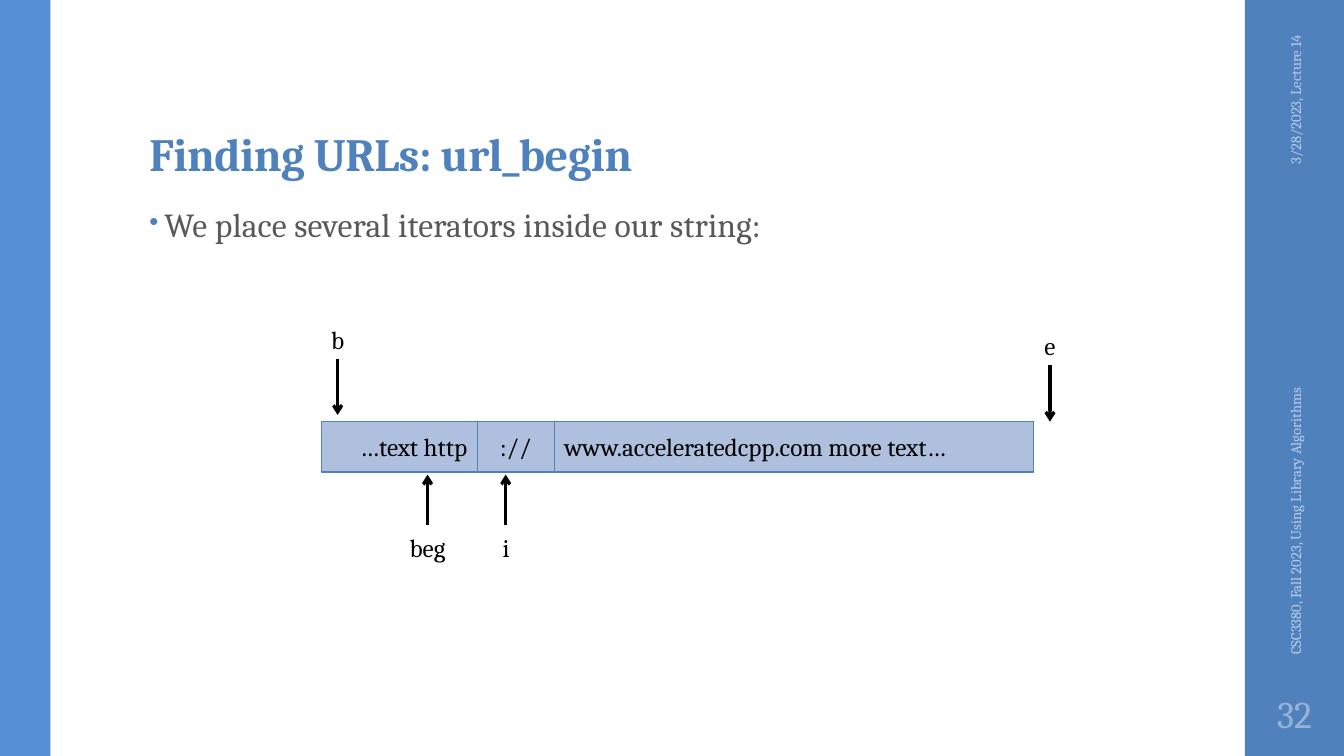
from lxml.etree import SubElement
from pptx import Presentation
from pptx.dml.color import RGBColor
from pptx.enum.shapes import MSO_CONNECTOR, MSO_SHAPE
from pptx.enum.text import MSO_ANCHOR, PP_ALIGN
from pptx.oxml.ns import qn
from pptx.util import Inches, Pt

WIDE, HIGH = Inches(13.33), Inches(7.5)
COLS, ROWS = 160, 90
FONT = "Cambria"
HUES = {
    "title": "4F81BD", "edge": "558ED5", "body": "595959", "foot": "B9CDE5",
    "page": "95B3D7", "cell": "AFC0DF", "ink": "000000",
}
LEFT, MID, RIGHT = PP_ALIGN.LEFT, PP_ALIGN.CENTER, PP_ALIGN.RIGHT


def col(n):
    return round(WIDE * n / COLS)


def row(n):
    return round(HIGH * n / ROWS)


def place(x, y, w, h):
    return col(x), row(y), col(w), row(h)


def hue(name):
    return RGBColor.from_string(HUES[name])


def bullet(para, name, size, indent):
    props = para._p.get_or_add_pPr()
    props.set("marL", str(indent))
    props.set("indent", str(-indent))
    tint = SubElement(props, qn("a:buClr"))
    SubElement(tint, qn("a:srgbClr"), val=HUES[name])
    SubElement(props, qn("a:buSzPct"), val=str(size * 1000))
    SubElement(props, qn("a:buChar"), char="•")


def write(shape, text, size=18, color="ink", bold=False, align=LEFT,
          anchor=MSO_ANCHOR.MIDDLE, wrap=True, lead=None, track=0,
          inset=(0.1, 0.05, 0.1, 0.05), dot=False):
    frame = shape.text_frame
    frame.word_wrap = wrap
    frame.vertical_anchor = anchor
    (frame.margin_left, frame.margin_top,
     frame.margin_right, frame.margin_bottom) = map(Inches, inset)
    para = frame.paragraphs[0]
    para.alignment = align
    if lead:
        para.line_spacing = lead
    if dot:
        bullet(para, "title", 80, Inches(0.15))
    run = para.add_run()
    run.text = text
    font = run.font
    font.name, font.size, font.bold = FONT, Pt(size), bold
    font.color.rgb = hue(color)
    if track:
        run._r.get_or_add_rPr().set("spc", str(round(track * 100)))


def label(slide, spot, text, turn=0, **style):
    box = slide.shapes.add_textbox(*place(*spot))
    box.rotation = turn
    write(box, text, **style)


def block(slide, spot, fill, line=None):
    shape = slide.shapes.add_shape(MSO_SHAPE.RECTANGLE, *place(*spot))
    shape.shadow.inherit = False
    shape.fill.solid()
    shape.fill.fore_color.rgb = hue(fill)
    if line:
        shape.line.color.rgb = hue(line)
        shape.line.width = Pt(0.75)
    else:
        shape.line.fill.background()
    return shape


def arrow(slide, x, start, end):
    link = slide.shapes.add_connector(
        MSO_CONNECTOR.STRAIGHT, col(x), row(start), col(x), row(end))
    link.line.color.rgb = hue("ink")
    link.line.width = Pt(2.25)
    SubElement(link.line._get_or_add_ln(), qn("a:tailEnd"), type="arrow")
    SubElement(link._element.spPr, qn("a:effectLst"))


def marker(slide, name, x, start, end, width):
    """Arrow pointing at the string, with its name at the far end."""
    arrow(slide, x, start, end)
    top = start - 4.7 if start < end else start + 0.3
    label(slide, (x - width / 2, top, width, 4.8), name, align=MID,
          anchor=MSO_ANCHOR.TOP, wrap=False)


def main():
    deck = Presentation()
    deck.slide_width, deck.slide_height = WIDE, HIGH
    slide = deck.slides.add_slide(deck.slide_layouts[6])

    # Side bars
    block(slide, (148.2, 0, 11.8, ROWS), "title")
    block(slide, (0, 0, 6, ROWS), "edge")

    # Title and body
    label(slide, (16.6, 3.8, 127.2, 18.4), "Finding URLs: url_begin",
          size=33, color="title", bold=True, anchor=MSO_ANCHOR.BOTTOM,
          lead=0.9, track=-0.4, inset=(0.1, 0.03, 0.1, 0.05))
    label(slide, (16.6, 24, 112.8, 57.1),
          "We place several iterators inside our string:",
          size=24, color="body", anchor=MSO_ANCHOR.TOP, lead=0.95,
          track=0.1, dot=True)

    # Date, footer and page number
    label(slide, (141.7, 13.1, 25, 4.8), "3/28/2023, Lecture 14", turn=270,
          size=10.5, color="foot", align=RIGHT)
    label(slide, (130.7, 53.2, 47, 4.8),
          "CSC3380, Fall 2023, Using Library Algorithms", turn=270,
          size=10.5, color="foot")
    label(slide, (148.2, 81, 11.8, 7.8), "32", size=27, color="page",
          align=MID, inset=(0.05,) * 4)

    # String cells, side by side
    x, top = 38.3, 50.2
    for text, width, align in (
            ("…text http", 18.5, RIGHT),
            ("://", 9.2, MID),
            ("www.acceleratedcpp.com more text…", 57, LEFT)):
        cell = block(slide, (x, top, width, 6), "cell", "title")
        write(cell, text, align=align)
        x += width

    # Iterators
    for name, x, start, end, width in (
            ("b", 40.2, 42.7, 49.4, 4.1),
            ("e", 125, 43.4, 50.2, 3.8),
            ("beg", 50.9, 62.5, 56.5, 7.1),
            ("i", 60.2, 62.5, 56.5, 3.1)):
        marker(slide, name, x, start, end, width)

    deck.save("out.pptx")


if __name__ == "__main__":
    main()
